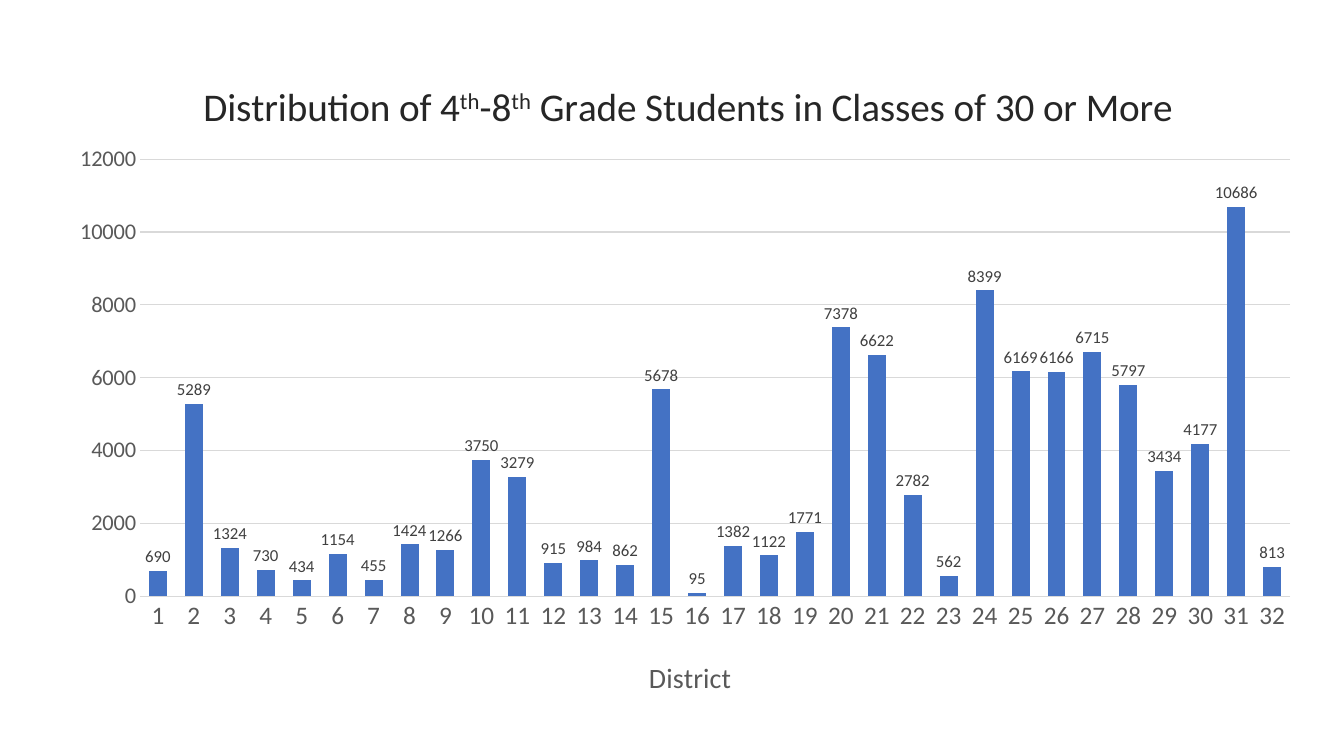
from lxml import etree
from pptx import Presentation
from pptx.chart.data import CategoryChartData
from pptx.dml.color import RGBColor
from pptx.enum.chart import XL_CHART_TYPE as ChartType, XL_LABEL_POSITION as LabelPosition
from pptx.enum.chart import XL_TICK_MARK as TickMark
from pptx.oxml.ns import qn
from pptx.util import Cm, Pt

COLORS = {"bar": "4472C4", "title": "262626", "axis": "595959",
          "value": "404040", "grid": "D9D9D9"}
STUDENTS = [690, 5289, 1324, 730, 434, 1154, 455, 1424,
            1266, 3750, 3279, 915, 984, 862, 5678, 95,
            1382, 1122, 1771, 7378, 6622, 2782, 562, 8399,
            6169, 6166, 6715, 5797, 3434, 4177, 10686, 813]


def style_font(font, size, color):
    font.name = "Calibri"
    font.size = Pt(size)
    font.bold = False
    font.color.rgb = RGBColor.from_string(COLORS[color])


def place(part, index, **settings):
    """Give a chart part a manual layout, in fractions of the chart."""
    for old in part.findall(qn("c:layout")):
        part.remove(old)
    layout = etree.Element(qn("c:layout"))
    manual = etree.SubElement(layout, qn("c:manualLayout"))
    for tag, value in settings.items():
        etree.SubElement(manual, qn("c:" + tag)).set("val", str(value))
    part.insert(index, layout)


prs = Presentation()
prs.slide_width, prs.slide_height = Cm(33.87), Cm(19.05)
slide = prs.slides.add_slide(prs.slide_layouts[6])

data = CategoryChartData()
data.categories = [str(district) for district in range(1, len(STUDENTS) + 1)]
data.add_series("Series 1", STUDENTS)
chart = slide.shapes.add_chart(ChartType.COLUMN_CLUSTERED, Cm(1.4), Cm(1.42),
                               Cm(31.75), Cm(16.51), data).chart
chart.has_legend = False
chart.font.name = "Calibri"
chart.font.size = Pt(10)

# Title with raised ordinals
chart.has_title = True
heading = chart.chart_title.text_frame.paragraphs[0]
for text in ["Distribution of 4", "th", "-8", "th",
             " Grade Students in Classes of 30 or More"]:
    run = heading.add_run()
    run.text = text
    style_font(run.font, 28, "title")
    if text == "th":
        run.font._element.set("baseline", "30000")

# Axes
districts, counts = chart.category_axis, chart.value_axis
for axis, size in [(districts, 18), (counts, 16)]:
    axis.major_tick_mark = axis.minor_tick_mark = TickMark.NONE
    style_font(axis.tick_labels.font, size, "axis")
counts.minimum_scale, counts.maximum_scale, counts.major_unit = 0, 12000, 2000
counts.format.line.fill.background()
for line in [districts.format.line, counts.major_gridlines.format.line]:
    line.color.rgb = RGBColor.from_string(COLORS["grid"])
    line.width = Pt(0.75)
districts.axis_title.text_frame.text = "District"
style_font(districts.axis_title.text_frame.paragraphs[0].runs[0].font, 20, "axis")

# Columns and their values
plot = chart.plots[0]
plot.gap_width = 100
plot.vary_by_categories = False
columns = plot.series[0]
columns.format.fill.solid()
columns.format.fill.fore_color.rgb = RGBColor.from_string(COLORS["bar"])
labels = columns.data_labels
labels.show_value = True
labels.position = LabelPosition.OUTSIDE_END
style_font(labels.font, 12, "value")

# Positions inside the chart
place(chart.chart_title._element, 1, xMode="edge", yMode="edge", x=0.115, y=0.035)
place(districts.axis_title._element, 1, xMode="edge", yMode="edge", x=0.467, y=0.91)
place(plot._element.getparent(), 0, layoutTarget="inner", xMode="edge", yMode="edge",
      x=0.067, y=0.157, w=0.913, h=0.667)

prs.save("out.pptx")
